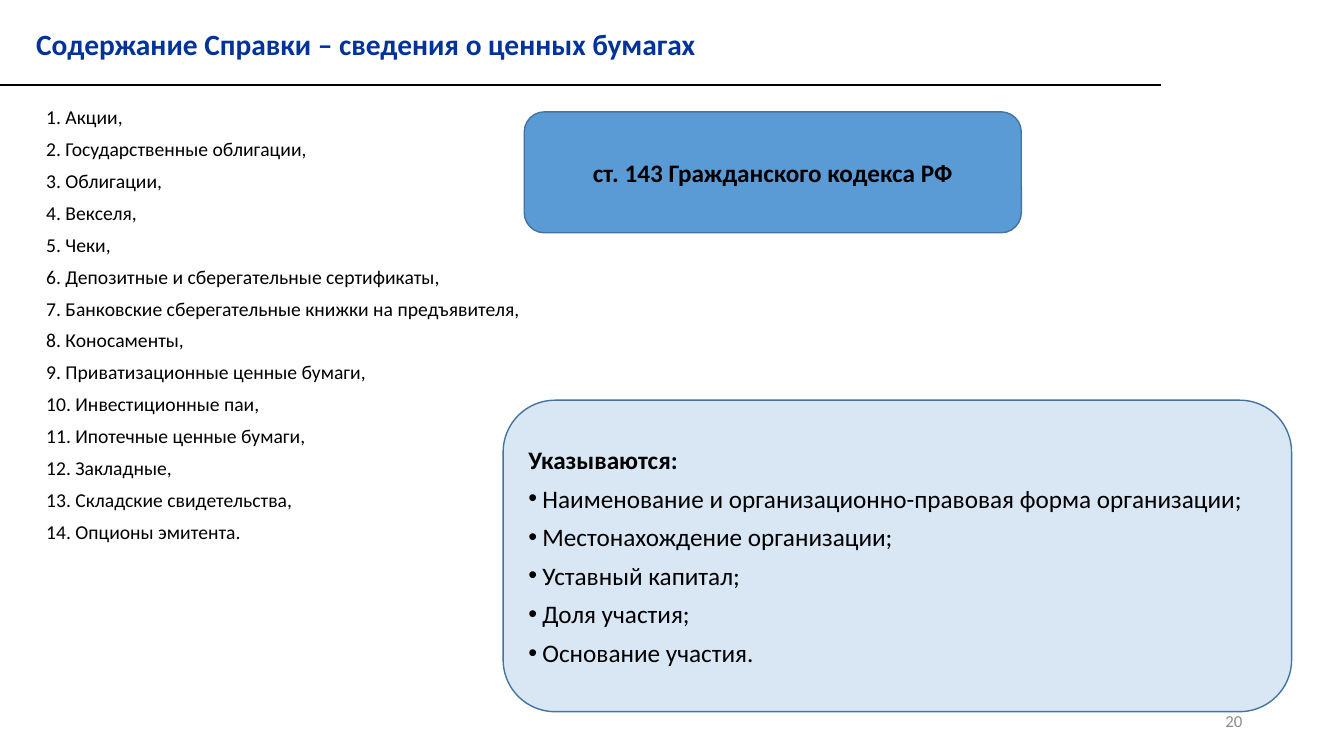
"""Build the slide on securities listed in a declaration."""
from lxml.etree import SubElement as Sub
from pptx import Presentation as Deck
from pptx.dml.color import RGBColor as Rgb
from pptx.enum.shapes import MSO_CONNECTOR as Conn, MSO_SHAPE as Form
from pptx.enum.text import MSO_ANCHOR as Anchor, MSO_AUTO_SIZE as Auto, PP_ALIGN as Align
from pptx.oxml.ns import qn
from pptx.util import Inches, Pt

COLORS = {"navy": "003399", "black": "000000", "blue": "5B9BD5",
          "edge": "43739E", "gray": "8C8C8C"}
PAPERS = ["Акции", "Государственные облигации", "Облигации", "Векселя", "Чеки",
          "Депозитные и сберегательные сертификаты",
          "Банковские сберегательные книжки на предъявителя", "Коносаменты",
          "Приватизационные ценные бумаги", "Инвестиционные паи",
          "Ипотечные ценные бумаги", "Закладные", "Складские свидетельства",
          "Опционы эмитента"]
DETAILS = ["Наименование и организационно-правовая форма организации;",
           "Местонахождение организации;", "Уставный капитал;",
           "Доля участия;", "Основание участия."]


class Page:
    """Hold the style and the current slide."""

    def __init__(self, deck, font="Calibri"):
        self.font = font
        self.slide = deck.slides.add_slide(deck.slide_layouts[6])

    def fill(self, frame, lines, size, color="black", bold=False, indent=0, **form):
        """Fill a frame with evenly styled paragraphs."""
        for i, line in enumerate(lines):
            para = frame.paragraphs[0] if i == 0 else frame.add_paragraph()
            run = para.add_run()
            run.text = line
            for name, value in form.items():
                setattr(para, name, value)
            style = {"name": self.font, "size": Pt(size), "bold": bold}
            for name, value in style.items():
                setattr(run.font, name, value)
            run.font.color.rgb = Rgb.from_string(COLORS[color])
            if indent:
                self.hang(para, indent)

    def hang(self, para, indent):
        """Give a paragraph a hanging indent."""
        props = para._p.get_or_add_pPr()
        props.set("marL", str(Inches(indent)))
        props.set("indent", str(-Inches(indent)))

    def dot(self, para, indent):
        """Give a paragraph a bullet."""
        self.hang(para, indent)
        props = para._p.get_or_add_pPr()
        Sub(props, qn("a:buFont"), typeface="Arial")
        Sub(props, qn("a:buChar"), char="•")

    def text(self, box, lines, size, wrap=True, anchor=Anchor.TOP, auto=Auto.NONE, **form):
        """Add a text box."""
        frame = self.slide.shapes.add_textbox(*map(Inches, box)).text_frame
        style = {"word_wrap": wrap, "vertical_anchor": anchor, "auto_size": auto}
        for name, value in style.items():
            setattr(frame, name, value)
        self.fill(frame, lines, size, **form)

    def card(self, box, alpha=100):
        """Add a rounded card and return its text frame."""
        shape = self.slide.shapes.add_shape(Form.ROUNDED_RECTANGLE, *map(Inches, box))
        shape.shadow.inherit = False
        shape.fill.solid()
        shape.fill.fore_color.rgb = Rgb.from_string(COLORS["blue"])
        if alpha < 100:
            tint = shape._element.spPr.find(".//" + qn("a:srgbClr"))
            Sub(tint, qn("a:alpha"), val=str(alpha * 1000))
        shape.line.color.rgb = Rgb.from_string(COLORS["edge"])
        shape.line.width = Pt(1)
        frame = shape.text_frame
        for name, value in {"word_wrap": True, "vertical_anchor": Anchor.MIDDLE}.items():
            setattr(frame, name, value)
        return frame

    def rule(self, left, right, top):
        """Add a level line."""
        ends = map(Inches, (left, top, right, top))
        line = self.slide.shapes.add_connector(Conn.STRAIGHT, *ends)
        line.line.color.rgb = Rgb.from_string(COLORS["black"])
        line.line.width = Pt(1.5)
        Sub(line._element.spPr, qn("a:effectLst"))


def main():
    """Draw the slide and save it."""
    deck = Deck()
    for name, value in {"slide_width": 13.33, "slide_height": 7.5}.items():
        setattr(deck, name, Inches(value))
    page = Page(deck)

    page.text((9.42, 6.95, 3, 0.4), ["20"], 12, color="gray",
              anchor=Anchor.MIDDLE, alignment=Align.RIGHT)
    page.text((0.26, 0.21, 6.81, 0.45), ["Содержание Справки – сведения о ценных бумагах"],
              21, wrap=False, auto=Auto.SHAPE_TO_FIT_TEXT, color="navy", bold=True)

    last = len(PAPERS)
    items = [f"{i}. {name}{'.' if i == last else ','}" for i, name in enumerate(PAPERS, 1)]
    page.text((0.36, 0.99, 12.6, 4.49), items, 14, auto=Auto.SHAPE_TO_FIT_TEXT,
              indent=0.31, space_after=Pt(6))

    law = page.card((5.2, 1.11, 4.93, 1.2))
    page.fill(law, ["ст. 143 Гражданского кодекса РФ"], 18, bold=True,
              alignment=Align.CENTER)

    facts = page.card((4.99, 3.97, 7.82, 3.09), alpha=23)
    page.fill(facts, ["Указываются:"] + DETAILS, 18, alignment=Align.JUSTIFY,
              space_after=Pt(6))
    head, *rest = facts.paragraphs
    head.runs[0].font.bold = True
    for para in rest:
        page.dot(para, 0.14)

    page.rule(0, 11.52, 0.84)
    deck.save("out.pptx")


if __name__ == "__main__":
    main()
